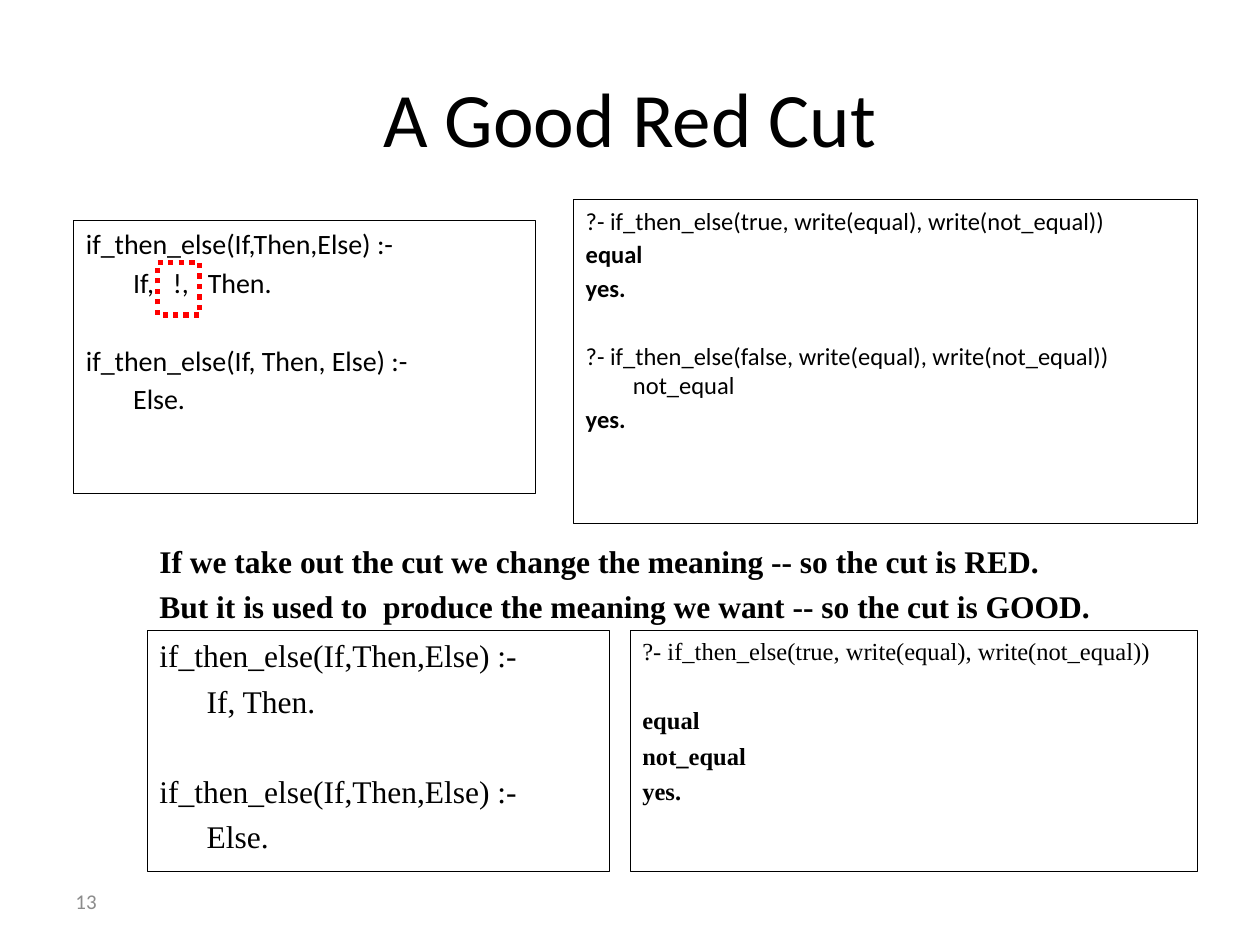
from dataclasses import dataclass

from pptx import Presentation
from pptx.dml.color import RGBColor
from pptx.enum.dml import MSO_LINE
from pptx.enum.shapes import MSO_SHAPE
from pptx.enum.text import MSO_ANCHOR, PP_ALIGN
from pptx.util import Pt


@dataclass(frozen=True)
class Theme:
    sans: str = "Calibri"
    serif: str = "Times New Roman"
    black: RGBColor = RGBColor(0, 0, 0)
    grey: RGBColor = RGBColor(0x8C, 0x8C, 0x8C)
    red: RGBColor = RGBColor(0xFF, 0, 0)
    title: float = 44
    large: float = 18
    code: float = 16
    query: float = 14
    number: float = 12
    hanging: float = 27
    border: float = 0.25
    cut_border: float = 3


THEME = Theme()


@dataclass(frozen=True)
class Line:
    text: str
    bold: bool = False
    after_gap: bool = False


@dataclass(frozen=True)
class Block:
    left: float
    top: float
    width: float
    height: float
    font: str
    size: float
    spacing: float
    gap: float
    lines: tuple[Line, ...]
    framed: bool = True


HEAD = "if_then_else(If,Then,Else) :-"
QUERY = "?- if_then_else(true, write(equal), write(not_equal))"

BLOCKS = (
    Block(42, 126, 264, 156, THEME.sans, THEME.code, 2.9, 25.4, (
        Line(HEAD),
        Line("\tIf,   !,   Then."),
        Line("if_then_else(If, Then, Else) :-", after_gap=True),
        Line("\tElse."),
    )),
    Block(327.6, 114, 356.4, 185, THEME.sans, THEME.query, 2.4, 22, (
        Line(QUERY),
        Line("equal", bold=True),
        Line("yes.", bold=True),
        Line("?- if_then_else(false, write(equal), write(not_equal)) not_equal",
             after_gap=True),
        Line("yes.", bold=True),
    )),
    Block(84, 360, 264, 138, THEME.serif, THEME.large, 4.5, 29.8, (
        Line(HEAD),
        Line("\tIf, Then."),
        Line(HEAD, after_gap=True),
        Line("\tElse."),
    )),
    Block(84, 306, 606, 42, THEME.serif, THEME.large, 4.5, 0, (
        Line("If we take out the cut we change the meaning -- so the cut is RED.",
             bold=True),
        Line("But it is used to  produce the meaning we want -- so the cut is GOOD.",
             bold=True),
    ), framed=False),
    Block(360, 360, 324, 138, THEME.serif, THEME.query, 3.3, 22.8, (
        Line(QUERY),
        Line("equal", bold=True, after_gap=True),
        Line("not_equal", bold=True),
        Line("yes.", bold=True),
    )),
)


def add_span(para, text: str, font: str, size: float, color: RGBColor,
             bold: bool = False) -> None:
    span = para.add_run()
    span.text = text
    span.font.name = font
    span.font.size = Pt(size)
    span.font.bold = bold
    span.font.color.rgb = color


def add_outline(page, left: float, top: float, width: float, height: float,
                color: RGBColor, weight: float):
    box = page.shapes.add_shape(MSO_SHAPE.RECTANGLE, Pt(left), Pt(top),
                                Pt(width), Pt(height))
    box.shadow.inherit = False
    box.fill.background()
    box.line.color.rgb = color
    box.line.width = Pt(weight)
    return box


def add_block(page, block: Block) -> None:
    place = (block.left, block.top, block.width, block.height)
    if block.framed:
        box = add_outline(page, *place, THEME.black, THEME.border)
    else:
        box = page.shapes.add_textbox(*map(Pt, place))
    frame = box.text_frame
    frame.word_wrap = True
    frame.vertical_anchor = MSO_ANCHOR.TOP
    for index, line in enumerate(block.lines):
        para = frame.add_paragraph() if index else frame.paragraphs[0]
        para.alignment = PP_ALIGN.LEFT
        para.space_before = Pt(block.gap if line.after_gap else block.spacing)
        set_hanging_indent(para)
        add_span(para, line.text, block.font, block.size, THEME.black, line.bold)


def set_hanging_indent(para) -> None:
    properties = para._p.get_or_add_pPr()
    properties.set("marL", str(Pt(THEME.hanging)))
    properties.set("indent", str(-Pt(THEME.hanging)))


def add_title(page, text: str) -> None:
    title = page.shapes.title
    title.left, title.top, title.width, title.height = map(Pt, (36, 21.6, 648, 90))
    title.text_frame.vertical_anchor = MSO_ANCHOR.MIDDLE
    para = title.text_frame.paragraphs[0]
    para.alignment = PP_ALIGN.CENTER
    add_span(para, text, THEME.sans, THEME.title, THEME.black)


def add_page_number(page, number: str) -> None:
    box = page.shapes.add_textbox(*map(Pt, (36, 500.5, 168, 28.8)))
    box.text_frame.word_wrap = True
    box.text_frame.vertical_anchor = MSO_ANCHOR.MIDDLE
    add_span(box.text_frame.paragraphs[0], number, THEME.sans, THEME.number,
             THEME.grey)


def main() -> None:
    deck = Presentation()
    deck.slide_width, deck.slide_height = Pt(720), Pt(540)
    page = deck.slides.add_slide(deck.slide_layouts[5])
    add_page_number(page, "13")
    add_title(page, "A Good Red Cut")
    for block in BLOCKS:
        add_block(page, block)
    cut_marker = add_outline(page, 90, 150, 24, 30, THEME.red, THEME.cut_border)
    cut_marker.line.dash_style = MSO_LINE.ROUND_DOT
    deck.save("out.pptx")


if __name__ == "__main__":
    main()
